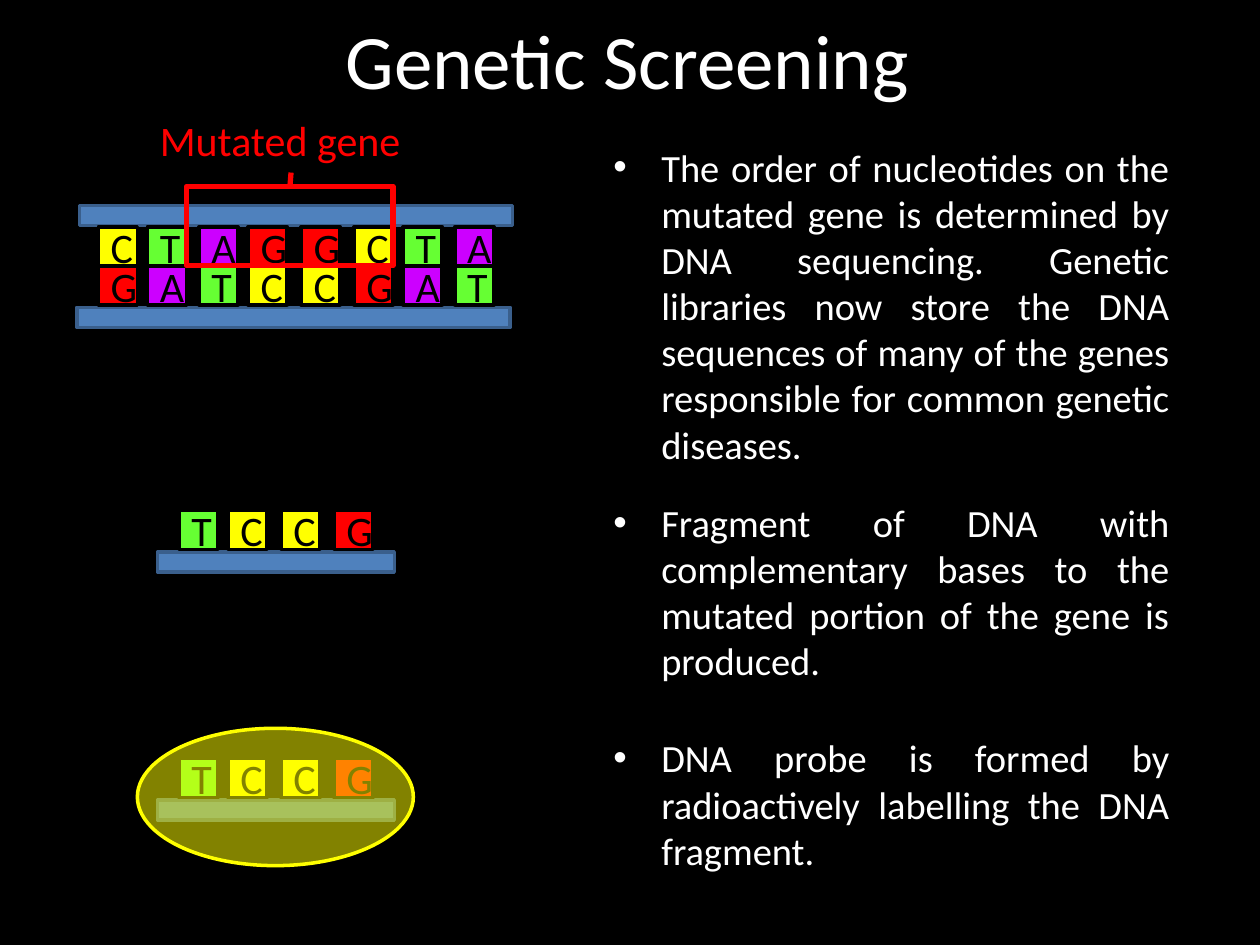
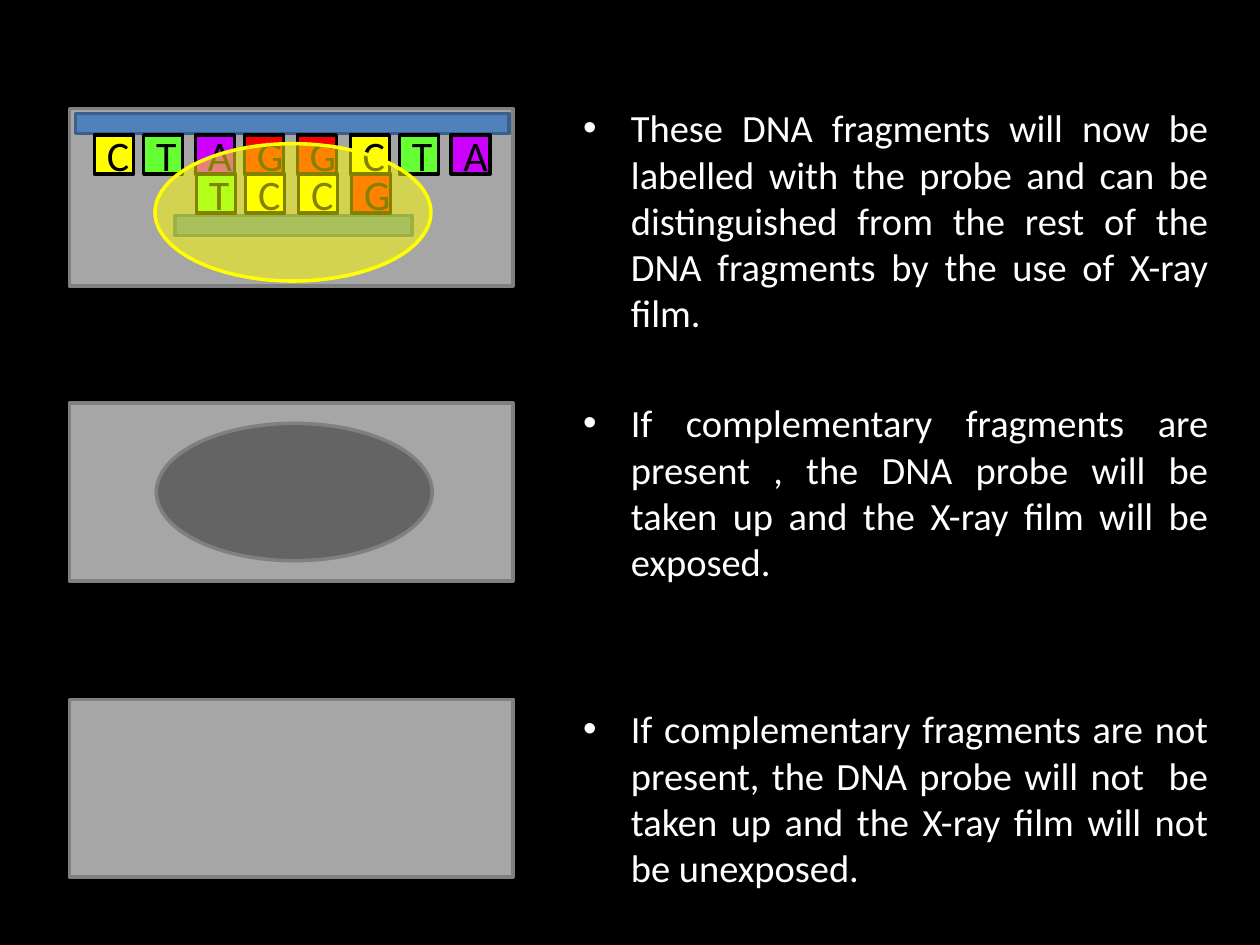
import lxml.etree
import pptx
import pptx.dml.color
import pptx.enum.shapes
import pptx.enum.text
import pptx.oxml.ns
import pptx.util

Inches = pptx.util.Inches
Pt = pptx.util.Pt
SHAPE = pptx.enum.shapes.MSO_SHAPE
ALIGN = pptx.enum.text.PP_ALIGN
ANCHOR = pptx.enum.text.MSO_ANCHOR
qn = pptx.oxml.ns.qn

BLACK, WHITE, RED, YELLOW = "000000", "FFFFFF", "FF0000", "FFFF00"
STRAND_FILL, STRAND_LINE = "4F81BD", "3A5F8C"
FILM_FILL, FILM_LINE, EXPOSED = "A6A6A6", "808080", "262626"
BASE_FILLS = {"C": YELLOW, "T": "66FF33", "A": "CC00FF", "G": RED}

GENE = "CTAGGCTA"
COMPLEMENT = GENE.translate(str.maketrans("ACGT", "TGCA"))
PROBE = slice(2, 6)
BASE_OFFSETS = (0, 0.39, 0.8, 1.19, 1.61, 2.03, 2.42, 2.83)
BASE_SIZE = 0.31
STRAND_WIDTH, FRAGMENT_WIDTH = 3.44, 1.88
PROBE_SIZE = (2.19, 1.09)
FILM_SIZE = (3.52, 1.41)


def rgb(color):
    return pptx.dml.color.RGBColor.from_string(color)


def write(tf, text, size=24, color=BLACK, align=ALIGN.LEFT, anchor=ANCHOR.TOP, bullet=False):
    tf.word_wrap = True
    tf.vertical_anchor = anchor
    p = tf.paragraphs[0]
    p.alignment = align
    r = p.add_run()
    r.text = text
    r.font.name = "Calibri"
    r.font.size = Pt(size)
    r.font.color.rgb = rgb(color)
    if bullet:
        pPr = p._p.get_or_add_pPr()
        pPr.set("marL", str(Inches(0.38)))
        pPr.set("indent", str(Inches(-0.38)))
        lxml.etree.SubElement(pPr, qn("a:buFont")).set("typeface", "Arial")
        lxml.etree.SubElement(pPr, qn("a:buChar")).set("char", "•")


class Deck:
    """Presentation with a shared style and a current slide."""

    def __init__(self):
        self.prs = pptx.Presentation()
        self.prs.slide_width = Inches(10)
        self.prs.slide_height = Inches(7.5)

    def slide(self):
        self.s = self.prs.slides.add_slide(self.prs.slide_layouts[6])
        self.s.background.fill.solid()
        self.s.background.fill.fore_color.rgb = rgb(BLACK)

    def text(self, text, x, y, w, h, **style):
        sp = self.s.shapes.add_textbox(Inches(x), Inches(y), Inches(w), Inches(h))
        write(sp.text_frame, text, **style)

    def bullet(self, text, x, y, w):
        self.text(text, x, y, w, 1.41, size=22, color=WHITE, align=ALIGN.JUSTIFY, bullet=True)

    def shape(self, x, y, w, h, fill, line, kind=SHAPE.RECTANGLE, width=2, alpha=None):
        sp = self.s.shapes.add_shape(kind, Inches(x), Inches(y), Inches(w), Inches(h))
        sp.shadow.inherit = False
        sp.line.color.rgb = rgb(line)
        sp.line.width = Pt(width)
        if fill is None:
            sp.fill.background()
            return sp
        sp.fill.solid()
        sp.fill.fore_color.rgb = rgb(fill)
        if alpha:
            clr = sp.fill._xPr.find(qn("a:solidFill"))[0]
            lxml.etree.SubElement(clr, qn("a:alpha")).set("val", str(alpha * 1000))
        return sp

    def line(self, x1, y1, x2, y2, color, width):
        c = self.s.shapes.add_connector(
            pptx.enum.shapes.MSO_CONNECTOR.STRAIGHT,
            Inches(x1), Inches(y1), Inches(x2), Inches(y2))
        c.line.color.rgb = rgb(color)
        c.line.width = Pt(width)
        lxml.etree.SubElement(c._element.spPr, qn("a:effectLst"))

    def backbone(self, x, y, w=STRAND_WIDTH):
        self.shape(x, y, w, 0.16, STRAND_FILL, STRAND_LINE)

    def bases(self, letters, x, y, offsets=BASE_OFFSETS):
        for letter, offset in zip(letters, offsets):
            sp = self.shape(x + offset - offsets[0], y, BASE_SIZE, BASE_SIZE,
                            BASE_FILLS[letter], BLACK)
            write(sp.text_frame, letter, align=ALIGN.CENTER, anchor=ANCHOR.MIDDLE)

    def fragment(self, x, y):
        self.backbone(x - 0.17, y + 0.33, FRAGMENT_WIDTH)
        self.bases(COMPLEMENT[PROBE], x, y, BASE_OFFSETS[PROBE])

    def spot(self, x, y, fill, line):
        self.shape(x, y, *PROBE_SIZE, fill, line, kind=SHAPE.OVAL, alpha=51)

    def probe(self, x, y):
        self.fragment(x, y)
        self.spot(x - 0.33, y - 0.24, YELLOW, YELLOW)

    def film(self, y):
        self.shape(0.55, y, *FILM_SIZE, FILM_FILL, FILM_LINE)


def screening_slide(deck):
    deck.slide()
    deck.text("Genetic Screening ", 0.55, -0.16, 9, 1.25, size=44, color=WHITE,
              align=ALIGN.CENTER, anchor=ANCHOR.MIDDLE)
    deck.backbone(0.63, 1.63)
    deck.backbone(0.61, 2.44)
    deck.bases(GENE, 0.78, 1.8)
    deck.bases(COMPLEMENT, 0.78, 1.8 + BASE_SIZE)
    deck.shape(1.48, 1.48, 1.64, 0.63, None, RED, width=3)
    deck.line(2.3, 1.49, 2.31, 1.37, RED, 3)
    deck.text("Mutated gene", 1.17, 0.86, 2.27, 0.5, color=RED)
    deck.fragment(1.42, 4.05)
    deck.probe(1.42, 6.02)
    for y, text in (
        (1.09, "The order of nucleotides on the mutated gene is determined by DNA sequencing. "
               "Genetic libraries now store the DNA sequences of many of the genes responsible "
               "for common genetic diseases."),
        (3.91, "Fragment of DNA with complementary bases to the mutated portion of the gene "
               "is produced."),
        (5.78, "DNA probe is formed by radioactively labelling the DNA fragment."),
    ):
        deck.bullet(text, 4.77, y, 4.61)


def film_slide(deck):
    deck.slide()
    for y, text in (
        (0.78, "These DNA fragments will now be labelled with the probe and can be "
               "distinguished from the rest of the DNA fragments by the use of X-ray film."),
        (3.12, "If complementary fragments are present , the DNA probe will be taken up "
               "and the X-ray film will be exposed."),
        (5.55, "If complementary fragments are not present, the DNA probe will not  be "
               "taken up and the X-ray film will not be unexposed."),
    ):
        deck.bullet(text, 4.53, y, 5.16)
    for y in (0.86, 3.2, 5.55):
        deck.film(y)
    deck.backbone(0.6, 0.9)
    deck.bases(GENE, 0.75, 1.07)
    deck.probe(1.56, 1.07 + BASE_SIZE)
    deck.spot(1.24, 3.36, EXPOSED, FILM_LINE)


def main():
    deck = Deck()
    screening_slide(deck)
    film_slide(deck)
    deck.prs.save("out.pptx")


if __name__ == "__main__":
    main()
